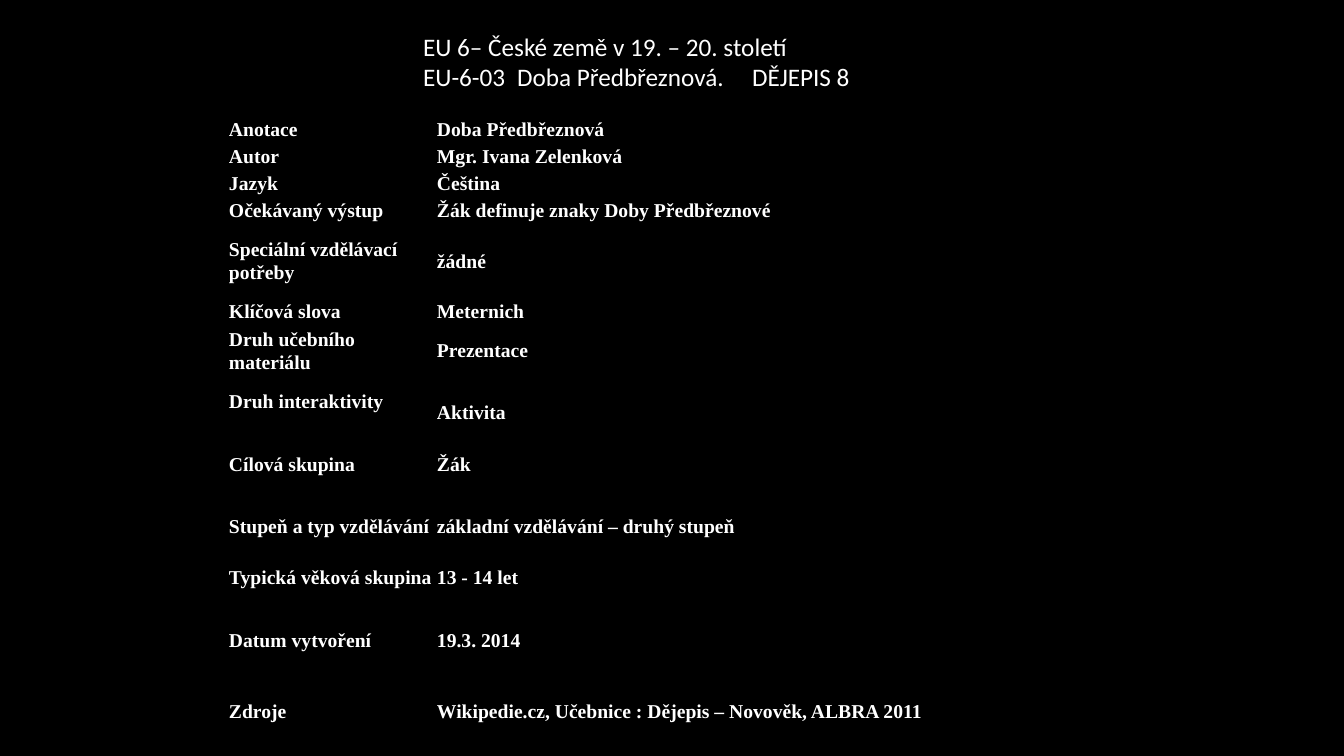
from lxml.etree import SubElement
from pptx import Presentation
from pptx.dml.color import RGBColor
from pptx.enum.text import MSO_ANCHOR, MSO_AUTO_SIZE, PP_ALIGN
from pptx.oxml import parse_xml
from pptx.oxml.ns import nsdecls, qn
from pptx.util import Pt

SCALE = 914400 / 100.8
COLORS = {"back": "000000", "text": "FFFFFF", "border": "000000"}
LINE = 23  # height of one line of table text

TITLE = ["EU 6– České země v 19. – 20. století",
         "EU-6-03\tDoba Předbřeznová.\tDĚJEPIS 8"]
TABS = [94, 329]

# Row height, label, value
ROWS = [
    (27, "Anotace", "Doba Předbřeznová"),
    (27, "Autor", "Mgr. Ivana Zelenková"),
    (27, "Jazyk", "Čeština"),
    (27, "Očekávaný výstup", "Žák definuje znaky Doby Předbřeznové"),
    (74, "Speciální vzdělávací potřeby", "žádné"),
    (27, "Klíčová slova", "Meternich"),
    (51, "Druh učebního materiálu", "Prezentace"),
    (51, "Druh interaktivity", "Aktivita"),
    (74, "Cílová skupina", "Žák"),
    (51, "Stupeň a typ vzdělávání", "základní vzdělávání – druhý stupeň"),
    (51, "Typická věková skupina", "13 - 14 let"),
    (74, "Datum vytvoření", "19.3. 2014"),
    (68, "Zdroje", "Wikipedie.cz, Učebnice : Dějepis – Novověk, ALBRA 2011"),
]
COLS = [208, 523]


def px(n):
    return round(n * SCALE)


def color(name):
    return RGBColor.from_string(COLORS[name])


def style(para, face, size, bold):
    font = para.font
    font.name, font.size, font.bold = face, Pt(size), bold
    font.color.rgb = color("text")


def add_title(slide, left, top, width, height):
    title = slide.shapes.title
    title.left, title.top = px(left), px(top)
    title.width, title.height = px(width), px(height)
    frame = title.text_frame
    frame.word_wrap = True
    frame.auto_size = MSO_AUTO_SIZE.NONE
    frame.vertical_anchor = MSO_ANCHOR.TOP
    frame.text = "\n".join(TITLE)
    for para in frame.paragraphs:
        para.alignment = PP_ALIGN.LEFT
        tabs = SubElement(para._p.get_or_add_pPr(), qn("a:tabLst"))
        for stop in TABS:
            SubElement(tabs, qn("a:tab"), pos=str(px(stop)), algn="l")
        style(para, "Calibri", 18, False)


def add_borders(cell):
    props = cell._tc.get_or_add_tcPr()
    for i, side in enumerate("LRTB"):
        props.insert(i, parse_xml(
            f'<a:ln{side} {nsdecls("a")} w="12700"><a:solidFill>'
            f'<a:srgbClr val="{COLORS["border"]}"/></a:solidFill></a:ln{side}>'))


def fill_cell(cell, text):
    cell.margin_left = cell.margin_right = px(1)
    cell.margin_top = cell.margin_bottom = px(1)
    cell.vertical_anchor = MSO_ANCHOR.MIDDLE
    cell.fill.background()
    add_borders(cell)
    cell.text = text
    para = cell.text_frame.paragraphs[0]
    para.line_spacing = 1.06
    style(para, "Times New Roman", 14, True)


def add_facts(slide, left, top):
    high = sum(row[0] for row in ROWS)
    table = slide.shapes.add_table(len(ROWS), len(COLS), px(left), px(top),
                                   px(sum(COLS)), px(high)).table
    table.first_row = table.horz_banding = False
    for col, width in zip(table.columns, COLS):
        col.width = px(width)
    for r, (height, *texts) in enumerate(ROWS):
        table.rows[r].height = px(height)
        for c, text in enumerate(texts):
            fill_cell(table.cell(r, c), text)
            # This value sits one line lower in its row
            if text == "Aktivita":
                table.cell(r, c).margin_top = px(LINE)


def main():
    deck = Presentation()
    deck.slide_width, deck.slide_height = px(1344), px(756)
    slide = deck.slides.add_slide(deck.slide_layouts[5])
    # Background
    fill = slide.background.fill
    fill.solid()
    fill.fore_color.rgb = color("back")
    # Heading and table of facts
    add_title(slide, 413, 26, 505, 102)
    add_facts(slide, 228, 116)
    deck.save("out.pptx")


if __name__ == "__main__":
    main()
